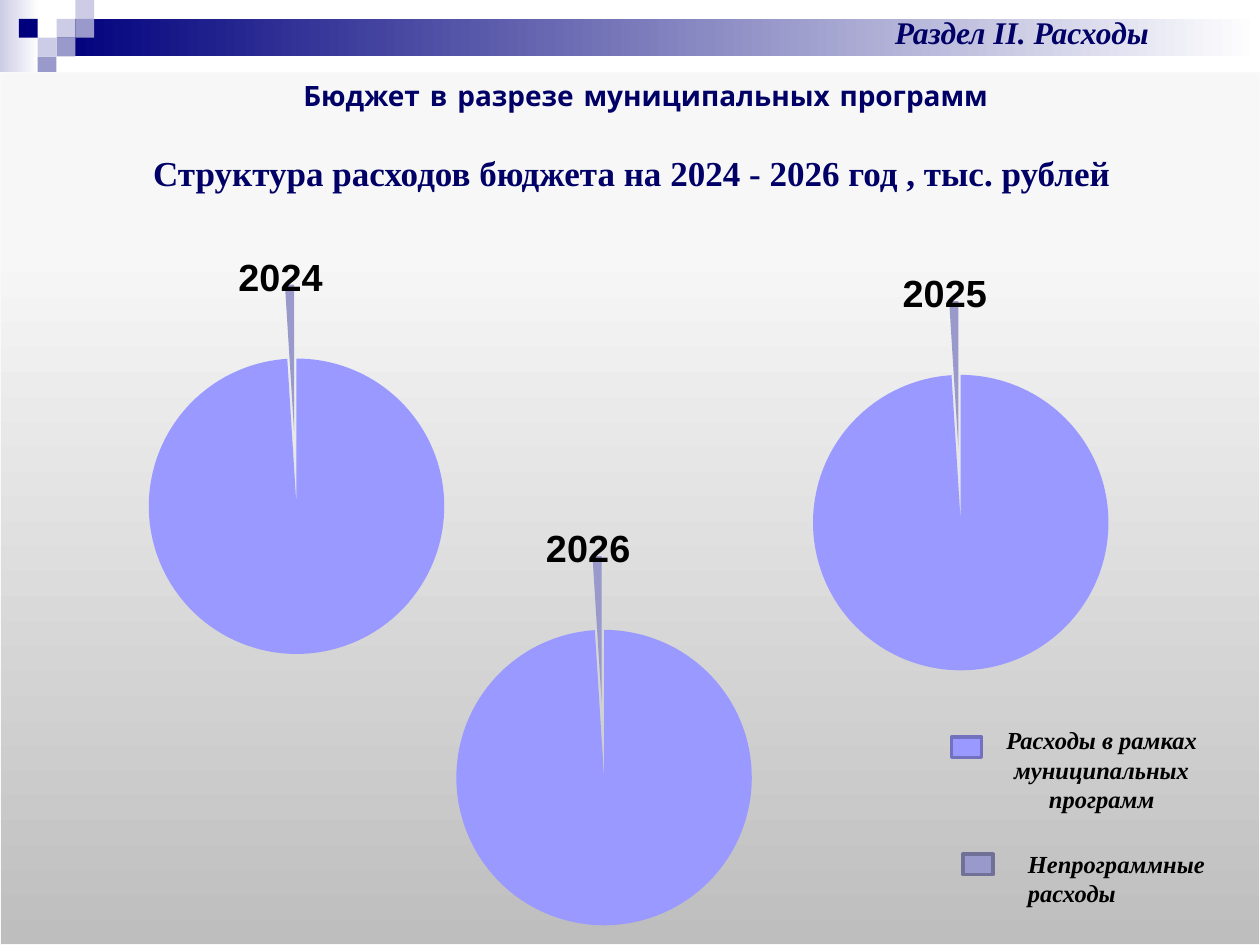
from copy import deepcopy

from pptx import Presentation
from pptx.chart.data import CategoryChartData
from pptx.dml.color import RGBColor
from pptx.enum.chart import XL_CHART_TYPE
from pptx.enum.shapes import MSO_SHAPE
from pptx.enum.text import PP_ALIGN
from pptx.oxml import parse_xml
from pptx.oxml.ns import nsdecls, qn
from pptx.util import Cm, Pt

RECT = MSO_SHAPE.RECTANGLE
PROCESS = MSO_SHAPE.FLOWCHART_PROCESS
PIE = XL_CHART_TYPE.PIE
LEFT, CENTER = PP_ALIGN.LEFT, PP_ALIGN.CENTER

COLORS = {
    "navy": "00007D", "title": "000066", "pale": "CCCCE6", "lilac": "9999CC",
    "program": "9999FF", "program_line": "7171BD", "other_line": "717197",
    "white": "FFFFFF", "black": "000000", "edge": "F9F9F9",
    "panel_dark": "BEBEBE", "panel_mid": "F7F7F7", "panel_light": "F8F8F8",
}
SERIF = "Times New Roman"


def rgb(name):
    """Return the named palette colour."""
    return RGBColor.from_string(COLORS[name])


def add_text(slide, text, box, size=14, font=SERIF, color="black", italic=False, align=CENTER):
    """Add a wrapped bold text box."""
    tf = slide.shapes.add_textbox(*map(Cm, box)).text_frame
    tf.word_wrap = True
    p = tf.paragraphs[0]
    p.alignment = align
    r = p.add_run()
    r.text = text
    r.font.name, r.font.size = font, Pt(size)
    r.font.bold, r.font.italic = True, italic
    r.font.color.rgb = rgb(color)


def add_box(slide, box, fill, line=None, width=2, kind=RECT):
    """Add a shape with a solid fill, or a gradient given as (position, colour) stops."""
    sp = slide.shapes.add_shape(kind, *map(Cm, box))
    sp.shadow.inherit = False
    if isinstance(fill, str):
        sp.fill.solid()
        sp.fill.fore_color.rgb = rgb(fill)
    else:
        sp.fill.gradient()
        stops = sp._element.spPr.find(".//" + qn("a:gsLst"))
        for _ in fill[2:]:
            stops.append(deepcopy(stops[-1]))
        for stop, (position, color) in zip(sp.fill.gradient_stops, fill):
            stop.position = position
            stop.color.rgb = rgb(color)
        sp.fill.gradient_angle = 0
    if line:
        sp.line.color.rgb = rgb(line)
        sp.line.width = Pt(width)
    else:
        sp.line.fill.background()
    return sp


def add_header(slide, left, top, width):
    """Draw the gradient band with its checkered corner and section name."""
    unit = 0.38
    add_box(slide, (left, top, 0.79, 1.47), [(0, "pale"), (1, "white")])
    add_box(slide, (left + 3 * unit, top + unit, width - 3 * unit, 2 * unit),
            [(0, "navy"), (1, "white")])
    checks = [(3, 1, "pale"), (4, 0, "pale"), (4, 1, "lilac"), (2, 2, "pale"),
              (1, 1, "navy"), (3, 2, "lilac"), (2, 3, "lilac")]
    for col, row, color in checks:
        add_box(slide, (left + col * unit, top + row * unit, unit, unit), color)


def add_panel(slide, left, top, width, height):
    """Draw the shaded background panel."""
    sp = add_box(slide, (left, top, width, height),
                 [(0, "panel_dark"), (0.8, "panel_mid"), (1, "panel_light")],
                 "edge", 0.75, PROCESS)
    sp.fill.gradient_angle = 90


def set_layout(parent, index, target="", **fractions):
    """Give a chart title or plot area a manual position."""
    for old in parent.findall(qn("c:layout")):
        parent.remove(old)
    modes = '<c:xMode val="edge"/><c:yMode val="edge"/>'
    values = "".join(f'<c:{k} val="{v}"/>' for k, v in fractions.items())
    parent.insert(index, parse_xml(
        f'<c:layout {nsdecls("c")}><c:manualLayout>{target}{modes}{values}'
        '</c:manualLayout></c:layout>'))


def add_pie(slide, year, values, left, top, width=11.2, height=9.8):
    """Add an exploded pie chart titled with its year."""
    data = CategoryChartData()
    data.categories = ["1", "2"]
    data.add_series(year, values)
    chart = slide.shapes.add_chart(PIE, *map(Cm, (left, top, width, height)), data).chart
    chart.has_legend = False
    chart.font.name, chart.font.size = "Arial", Pt(18)
    chart.font.color.rgb = rgb("black")
    chart.has_title = True
    tf = chart.chart_title.text_frame
    tf.text = year
    font = tf.paragraphs[0].runs[0].font
    font.name, font.size, font.bold = "Arial", Pt(21.6), True
    font.color.rgb = rgb("black")
    plot = chart.plots[0]
    plot.vary_by_categories = True
    series = plot.series[0]
    for i, color in enumerate(("program", "lilac")):
        fmt = series.points[i].format
        fmt.fill.solid()
        fmt.fill.fore_color.rgb = rgb(color)
        fmt.line.fill.background()
    series._element.find(qn("c:dPt")).addprevious(
        parse_xml(f'<c:explosion {nsdecls("c")} val="25"/>'))
    set_layout(chart.chart_title._element, 1, x=0.39, y=0.12)
    set_layout(chart._chartSpace.find(".//" + qn("c:plotArea")), 0,
               '<c:layoutTarget val="inner"/>', x=0.17, y=0.2, w=0.67, h=0.76)


def add_legend(slide, left, top):
    """Place the two colour keys and their captions."""
    key = (0.61, 0.41)
    add_box(slide, (left, top + 0.36, *key), "program", "program_line")
    add_box(slide, (left + 0.23, top + 2.72, *key), "lilac", "other_line")
    add_text(slide, "Расходы в рамках муниципальных программ",
             (left + 0.53, top, 5, 2.06), italic=True)
    add_text(slide, "Непрограммные расходы",
             (left + 1.29, top + 2.49, 4.2, 2.06), italic=True, align=LEFT)


def main():
    """Build and save the slide."""
    prs = Presentation()
    prs.slide_width, prs.slide_height = Cm(25.4), Cm(19.05)
    slide = prs.slides.add_slide(prs.slide_layouts[6])
    add_header(slide, 0, 0, 25.4)
    add_panel(slide, 0, 1.47, 25.4, 17.58)
    add_text(slide, "Структура расходов бюджета на 2024 - 2026 год , тыс. рублей",
             (1.9, 2.92, 21.67, 1.88), size=20, color="title")
    add_text(slide, "Раздел II. Расходы", (15.9, 0.13, 9.4, 1.02),
             size=18, color="title", italic=True)
    add_text(slide, "Бюджет в разрезе муниципальных программ",
             (2.24, 1.45, 21.56, 0.94), size=16, font="Comic Neue", color="title")
    for year, left, top in (("2024", 0.3, 3.78), ("2025", 13.69, 4.11), ("2026", 6.5, 9.25)):
        add_pie(slide, year, (99, 1), left, top)
    add_legend(slide, 19.18, 14.5)
    prs.save("out.pptx")


if __name__ == "__main__":
    main()
